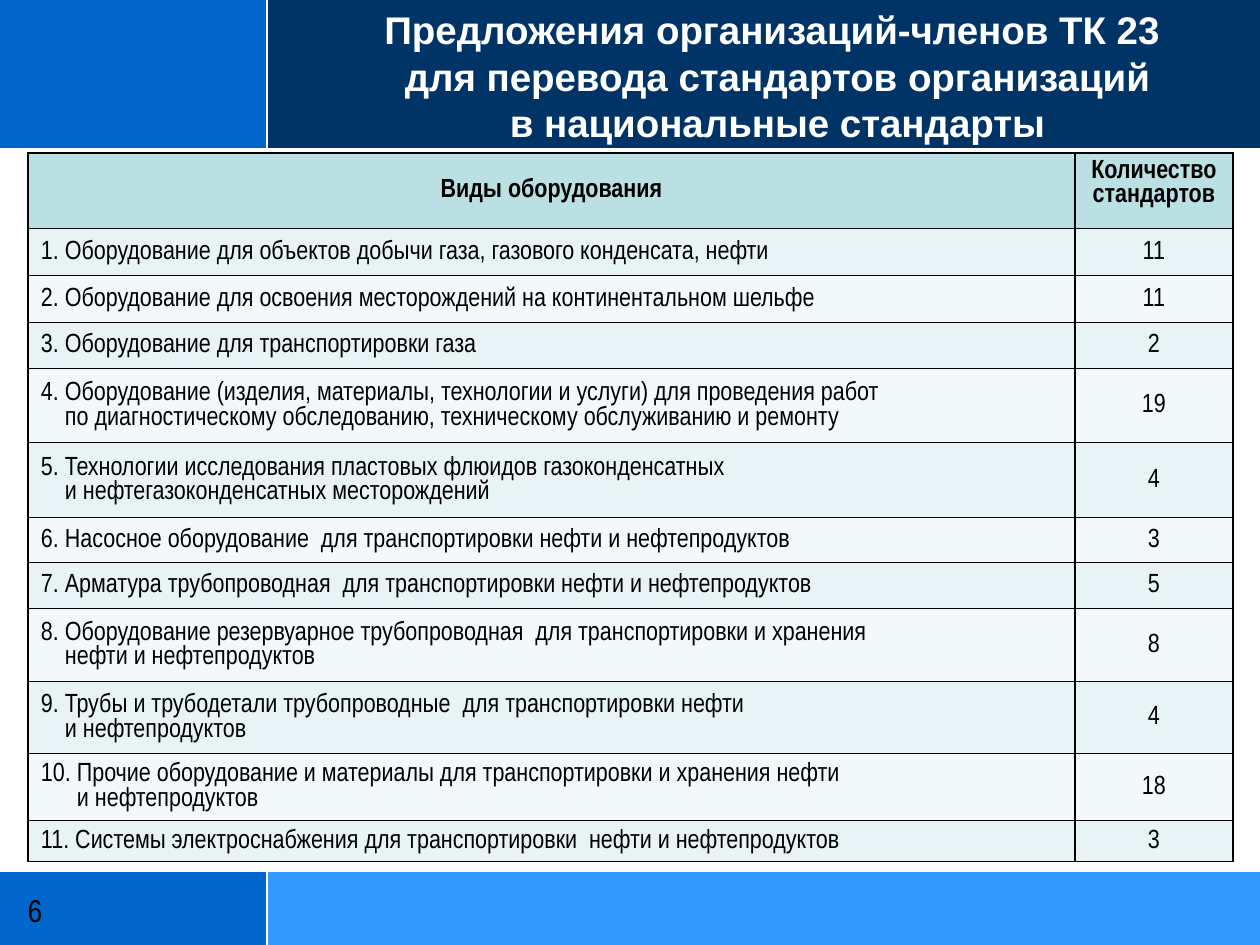
from lxml.etree import SubElement
from pptx import Presentation
from pptx.dml.color import RGBColor
from pptx.enum.shapes import MSO_CONNECTOR as Connector, MSO_SHAPE as Shape
from pptx.enum.text import MSO_ANCHOR as Anchor, PP_ALIGN as Align
from pptx.oxml.ns import qn
from pptx.util import Pt

PX = 914400 // 126
WIDTH, HEIGHT = 1260, 945
SPLIT, HEADER_END, FOOTER_TOP = 267, 149, 871
COLORS = {
    "blue": "0066CC", "navy": "003366", "sky": "3399FF",
    "white": "FFFFFF", "black": "000000",
    "head": "BBE0E3", "odd": "E7F3F4", "even": "F3F9FA",
}

# Content
TITLE = [
    "Предложения организаций-членов ТК 23 ",
    "для перевода стандартов организаций",
    "в национальные стандарты",
]
PAGE_NUMBER = "6"
COLUMNS = [("Виды оборудования", 1047, Anchor.MIDDLE),
           ("Количество стандартов", 158, Anchor.TOP)]
HEAD_HEIGHT = 71
# Lines of the entry, number of standards, row height
ROWS = [
    (["1. Оборудование для объектов добычи газа, газового конденсата, нефти"], 11, 47),
    (["2. Оборудование для освоения месторождений на континентальном шельфе"], 11, 47),
    (["3. Оборудование для транспортировки газа"], 2, 46),
    (["4. Оборудование (изделия, материалы, технологии и услуги) для проведения работ",
      "по диагностическому обследованию, техническому обслуживанию и ремонту"], 19, 74),
    (["5. Технологии исследования пластовых флюидов газоконденсатных",
      "и нефтегазоконденсатных месторождений"], 4, 75),
    (["6. Насосное оборудование  для транспортировки нефти и нефтепродуктов"], 3, 45),
    (["7. Арматура трубопроводная  для транспортировки нефти и нефтепродуктов"], 5, 46),
    (["8. Оборудование резервуарное трубопроводная  для транспортировки и хранения",
      "нефти и нефтепродуктов"], 8, 73),
    (["9. Трубы и трубодетали трубопроводные  для транспортировки нефти",
      "и нефтепродуктов"], 4, 72),
    (["10. Прочие оборудование и материалы для транспортировки и хранения нефти",
      "и нефтепродуктов"], 18, 67),
    (["11. Системы электроснабжения для транспортировки  нефти и нефтепродуктов"], 3, 41),
]


def rgb(name):
    return RGBColor.from_string(COLORS[name])


def add_panel(page, left, top, right, bottom, color):
    panel = page.shapes.add_shape(Shape.RECTANGLE, left * PX, top * PX,
                                  (right - left) * PX, (bottom - top) * PX)
    panel.shadow.inherit = False
    panel.fill.solid()
    panel.fill.fore_color.rgb = rgb(color)
    panel.line.fill.background()


def add_rule(page, x1, y1, x2, y2):
    rule = page.shapes.add_connector(Connector.STRAIGHT, x1 * PX, y1 * PX, x2 * PX, y2 * PX)
    rule.line.color.rgb = rgb("white")
    rule.line.width = Pt(1.25)
    SubElement(rule._element.spPr, qn("a:effectLst"))


def write(para, lines, size, font, color="black", bold=False, align=Align.LEFT):
    para.alignment = align
    for index, line in enumerate(lines):
        if index:
            para.add_line_break()
        span = para.add_run()
        span.text = line
        span.font.size = Pt(size)
        span.font.name = font
        span.font.bold = bold
        span.font.color.rgb = rgb(color)


def add_text(page, left, top, width, height, anchor, lines, size, font, **style):
    box = page.shapes.add_textbox(left * PX, top * PX, width * PX, height * PX)
    frame = box.text_frame
    frame.word_wrap = True
    frame.vertical_anchor = anchor
    frame.margin_left = frame.margin_right = frame.margin_top = frame.margin_bottom = 0
    write(frame.paragraphs[0], lines, size, font, **style)


def fill_cell(cell, lines, fill, anchor=Anchor.MIDDLE, **style):
    props = cell._tc.get_or_add_tcPr()
    for side in ("lnL", "lnR", "lnT", "lnB"):
        border = SubElement(props, qn(f"a:{side}"), w=str(Pt(1)))
        solid = SubElement(border, qn("a:solidFill"))
        SubElement(solid, qn("a:srgbClr"), val=COLORS["black"])
    cell.fill.solid()
    cell.fill.fore_color.rgb = rgb(fill)
    cell.vertical_anchor = anchor
    para = cell.text_frame.paragraphs[0]
    write(para, lines, 15, "Arial Narrow", **style)
    return para


def add_standards_table(page):
    heights = [HEAD_HEIGHT] + [height for _, _, height in ROWS]
    widths = [width for _, width, _ in COLUMNS]
    table = page.shapes.add_table(len(heights), len(widths), 28 * PX, 153 * PX,
                                  sum(widths) * PX, sum(heights) * PX).table
    table.first_row = table.horz_banding = False
    for row, height in zip(table.rows, heights):
        row.height = height * PX
    for index, (heading, width, anchor) in enumerate(COLUMNS):
        table.columns[index].width = width * PX
        fill_cell(table.cell(0, index), [heading], "head", anchor, bold=True, align=Align.CENTER)

    for index, (lines, count, _) in enumerate(ROWS, start=1):
        fill = "odd" if index % 2 else "even"
        name, number = table.cell(index, 0), table.cell(index, 1)
        for cell in (name, number):
            cell.margin_left = cell.margin_right = cell.margin_top = PX
            cell.margin_bottom = 0
        name.margin_left = 13 * PX
        para = fill_cell(name, lines, fill)
        # Hanging indent as wide as the entry number
        hang = (12 + 12 * len(str(index))) * PX
        para_props = para._p.get_or_add_pPr()
        para_props.set("marL", str(hang))
        para_props.set("indent", str(-hang))
        fill_cell(number, [str(count)], fill, align=Align.CENTER)


def main():
    deck = Presentation()
    deck.slide_width, deck.slide_height = WIDTH * PX, HEIGHT * PX
    page = deck.slides.add_slide(deck.slide_layouts[6])
    page.background.fill.solid()
    page.background.fill.fore_color.rgb = rgb("blue")

    # Header, body and footer panels with white rules
    add_panel(page, SPLIT, FOOTER_TOP, WIDTH, HEIGHT, "sky")
    add_rule(page, SPLIT, FOOTER_TOP, SPLIT, HEIGHT)
    add_panel(page, 0, 0, SPLIT, HEADER_END, "blue")
    add_panel(page, SPLIT, 0, WIDTH, HEADER_END, "navy")
    add_rule(page, SPLIT, 0, SPLIT, HEADER_END)
    add_rule(page, 0, FOOTER_TOP, WIDTH, FOOTER_TOP)
    add_panel(page, 0, HEADER_END, WIDTH, FOOTER_TOP, "white")
    add_rule(page, 0, HEADER_END, WIDTH, HEADER_END)

    # Title, table and page number
    add_text(page, 295, 6, 965, 139, Anchor.BOTTOM, TITLE, 22, "Arial",
             color="white", bold=True, align=Align.CENTER)
    add_standards_table(page)
    add_text(page, 28, 877, 205, 66, Anchor.MIDDLE, [PAGE_NUMBER], 18, "Arial Narrow")

    deck.save("out.pptx")


if __name__ == "__main__":
    main()
